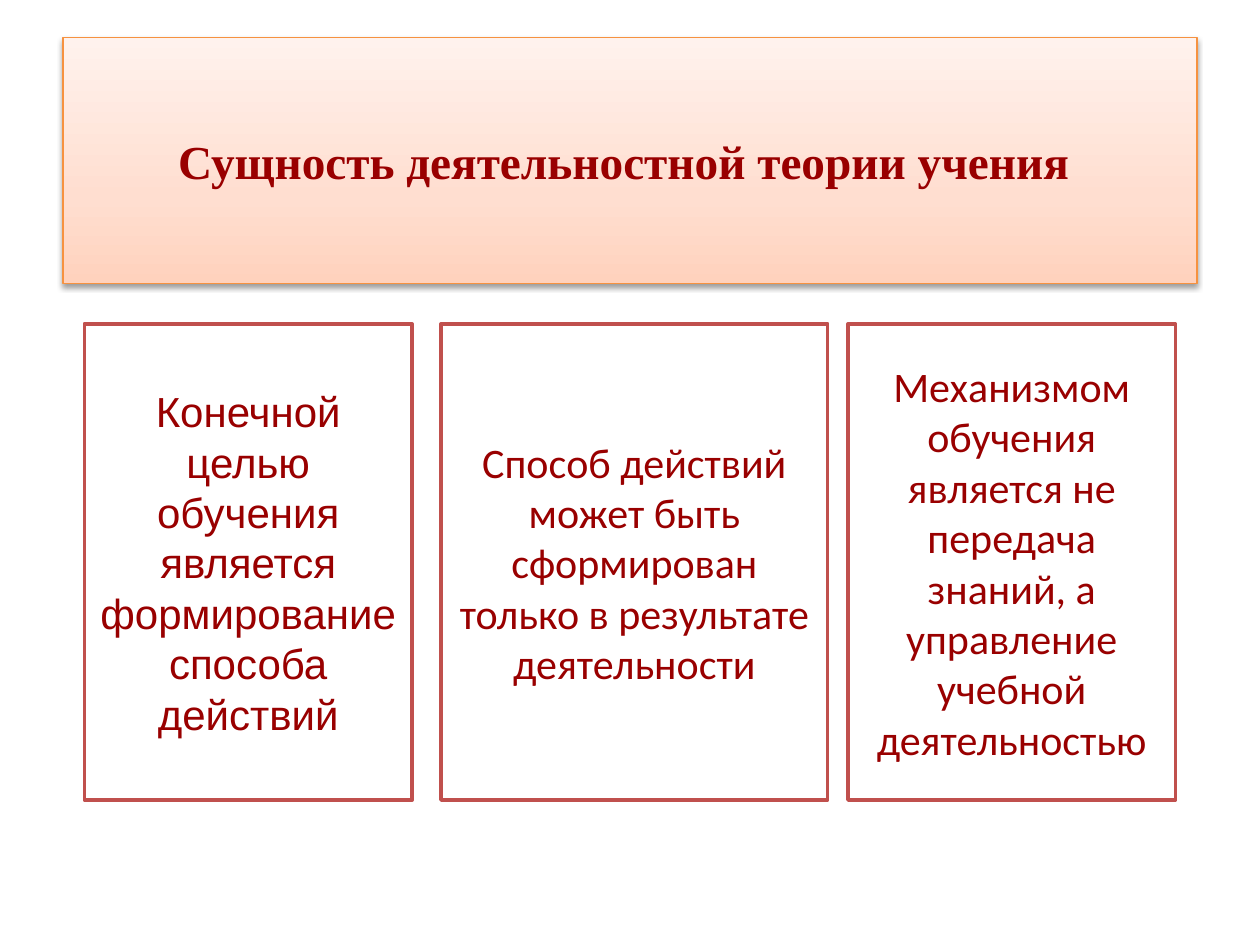
from copy import deepcopy
from dataclasses import dataclass

from lxml.etree import SubElement
from pptx import Presentation
from pptx.dml.color import RGBColor
from pptx.enum.shapes import MSO_SHAPE as Shape
from pptx.enum.text import MSO_ANCHOR as Anchor, PP_ALIGN as Align
from pptx.oxml.ns import qn
from pptx.util import Inches, Pt

DARK_RED = "990000"
STOPS = [(0, "FFD2BD"), (0.35, "FFDED0"), (1, "FFF2ED")]
SHADOW = {"blurRad": Pt(3.1), "dist": Pt(1.6), "dir": 90 * 60000, "rotWithShape": 0}
CARD_TOP, CARD_HEIGHT = 2.57, 3.78


@dataclass
class Box:
    left: float
    top: float
    width: float
    height: float
    text: str
    font: dict
    line: str = "C0504D"
    line_width: float = 2
    right_inset: float = 0.1


def rgb(value: str) -> RGBColor:
    return RGBColor.from_string(value)


def card(left: float, width: float, font: str, text: str) -> Box:
    return Box(left, CARD_TOP, width, CARD_HEIGHT, text, {"name": font, "size": Pt(24)})


def draw_box(slide, box: Box):
    sp = slide.shapes.add_shape(
        Shape.RECTANGLE,
        *(Inches(v) for v in (box.left, box.top, box.width, box.height)),
    )
    sp.shadow.inherit = False
    sp.fill.solid()
    sp.fill.fore_color.rgb = rgb("FFFFFF")
    sp.line.color.rgb = rgb(box.line)
    sp.line.width = Pt(box.line_width)
    tf = sp.text_frame
    layout = {
        "word_wrap": True,
        "vertical_anchor": Anchor.MIDDLE,
        "margin_right": Inches(box.right_inset),
    }
    for name, value in layout.items():
        setattr(tf, name, value)
    p = tf.paragraphs[0]
    p.alignment = Align.CENTER
    r = p.add_run()
    r.text = box.text
    for name, value in box.font.items():
        setattr(r.font, name, value)
    r.font.color.rgb = rgb(DARK_RED)
    return sp


def add_gradient(sp) -> None:
    sp.fill.gradient()
    sp.fill.gradient_angle = 90
    stop_list = sp.fill._xPr.find(".//" + qn("a:gsLst"))
    stop_list.append(deepcopy(stop_list[-1]))
    for stop, (position, color) in zip(sp.fill.gradient_stops, STOPS):
        stop.position = position
        stop.color.rgb = rgb(color)
        stop.color.brightness = 0


def add_shadow(sp) -> None:
    effects = sp._element.spPr.find(qn("a:effectLst"))
    outer = SubElement(effects, qn("a:outerShdw"))
    for name, value in SHADOW.items():
        outer.set(name, str(int(value)))
    color = SubElement(outer, qn("a:srgbClr"), val="000000")
    SubElement(color, qn("a:alpha"), val="38000")


TITLE = Box(
    0.5, 0.3, 9, 1.95, "Сущность деятельностной теории учения",
    {"name": "Times New Roman", "size": Pt(27), "bold": True},
    line="F69240", line_width=0.75, right_inset=0.2,
)
CARDS = [
    card(0.67, 2.6, "Arial",
         "Конечной целью обучения является формирование способа действий"),
    card(3.5, 3.07, "Calibri",
         "Способ действий может быть сформирован только в результате деятельности"),
    card(6.73, 2.6, "Calibri",
         "Механизмом обучения является не передача знаний, "
         "а управление учебной деятельностью"),
]


def main() -> None:
    prs = Presentation()
    prs.slide_width, prs.slide_height = Inches(10), Inches(7.5)
    slide = prs.slides.add_slide(prs.slide_layouts[6])
    title = draw_box(slide, TITLE)
    add_gradient(title)
    add_shadow(title)
    for box in CARDS:
        draw_box(slide, box)
    prs.save("out.pptx")


if __name__ == "__main__":
    main()
